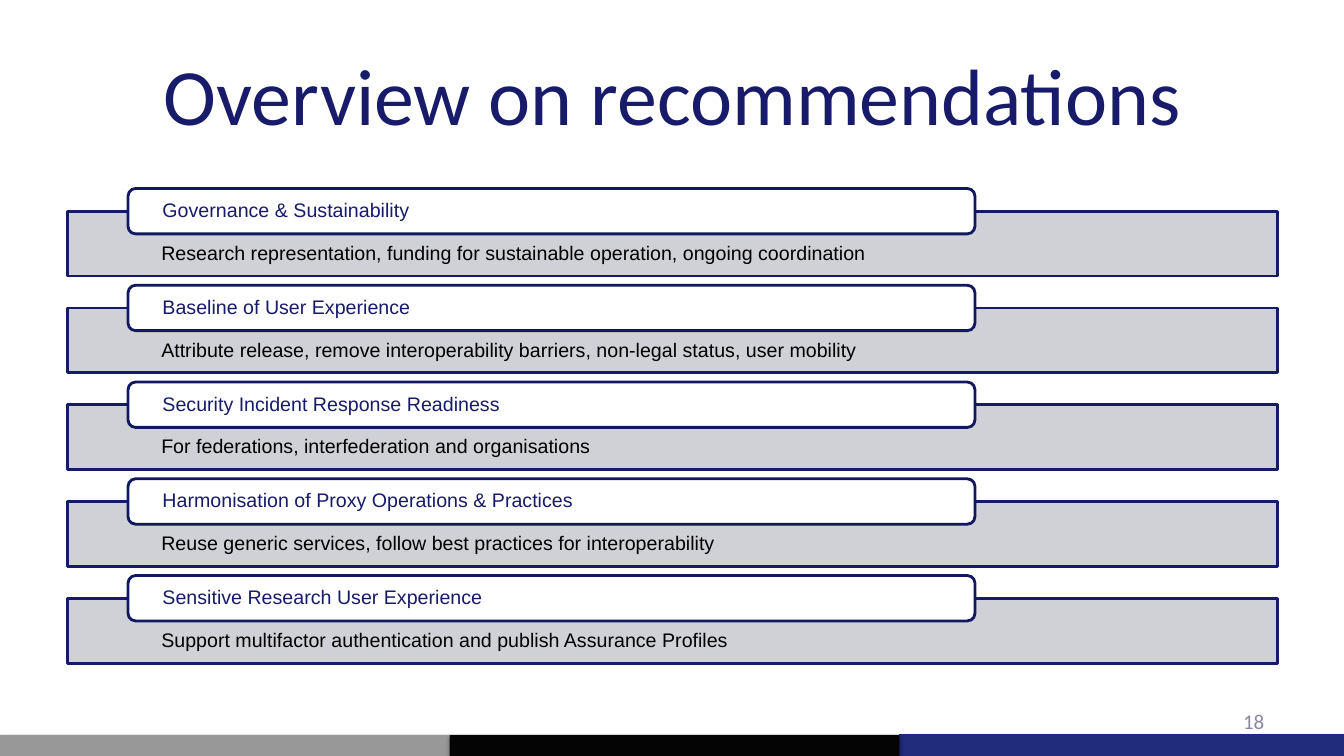
from lxml.etree import SubElement
from pptx import Presentation
from pptx.dml.color import RGBColor
from pptx.enum.shapes import MSO_SHAPE
from pptx.enum.text import MSO_ANCHOR, PP_ALIGN
from pptx.oxml import parse_xml
from pptx.oxml.ns import qn
from pptx.util import Inches, Pt

NAVY = "181B6A"
RECOMMENDATIONS = [
    ("Governance & Sustainability",
     "Research representation, funding for sustainable operation, ongoing coordination"),
    ("Baseline of User Experience",
     "Attribute release, remove interoperability barriers, non-legal status, user mobility"),
    ("Security Incident Response Readiness",
     "For federations, interfederation and organisations"),
    ("Harmonisation of Proxy Operations & Practices",
     "Reuse generic services, follow best practices for interoperability"),
    ("Sensitive Research User Experience",
     "Support multifactor authentication and publish Assurance Profiles"),
]
BAND_SHADOW = (
    '<a:effectLst xmlns:a="http://schemas.openxmlformats.org/drawingml/2006/main">'
    '<a:outerShdw blurRad="39370" dist="22860" dir="5400000" rotWithShape="0">'
    '<a:srgbClr val="000000"><a:alpha val="35000"/></a:srgbClr>'
    '</a:outerShdw></a:effectLst>'
)


def color(value):
    return RGBColor.from_string(value)


def write(shape, text, size=14, font="Arial", ink="000000", align=PP_ALIGN.LEFT,
          anchor=MSO_ANCHOR.MIDDLE, insets=(0.13, 0.06, 0.13, 0.06), spacing=None):
    """Put one formatted paragraph into a shape; insets are left, top, right, bottom."""
    frame = shape.text_frame
    frame.word_wrap = True
    frame.vertical_anchor = anchor
    (frame.margin_left, frame.margin_top,
     frame.margin_right, frame.margin_bottom) = map(Inches, insets)
    paragraph = frame.paragraphs[0]
    paragraph.alignment = align
    paragraph.line_spacing = spacing
    run = paragraph.add_run()
    run.text = text
    run.font.size = Pt(size)
    run.font.name = font
    run.font.color.rgb = color(ink)


def add_text(slide, box, text, **style):
    write(slide.shapes.add_textbox(*map(Inches, box)), text, **style)


def add_box(slide, box, fill, line=None, width=2, preset=MSO_SHAPE.RECTANGLE):
    shape = slide.shapes.add_shape(preset, *map(Inches, box))
    shape.shadow.inherit = False
    shape.fill.solid()
    shape.fill.fore_color.rgb = color(fill)
    if line:
        shape.line.color.rgb = color(line)
        shape.line.width = Pt(width)
    else:
        shape.line.fill.background()
    return shape


def footer_bands(slide, left, top, width, height):
    bands = [(0, "989898", None), (2, "212C7D", "1C287C"), (1, "040404", None)]
    for column, fill, line in bands:
        band = add_box(slide, (left + column * width / 3, top, width / 3, height),
                       fill, line, 0.75)
        properties = band.element.spPr
        properties.replace(properties.find(qn("a:effectLst")), parse_xml(BAND_SHADOW))


def recommendation(slide, left, top, width, height, heading, detail):
    """Draw a grey panel with a heading label overlapping its top edge."""
    label_height = 0.45
    panel_top = top + label_height / 2
    panel = add_box(slide, (left, panel_top, width, height - label_height / 2),
                    "CBCBD3", "151A6A")
    fill_color = panel.element.spPr.find(qn("a:solidFill"))[0]
    SubElement(fill_color, qn("a:alpha"), val="90000")
    write(panel, detail, anchor=MSO_ANCHOR.TOP,
          insets=(0.93, 0.32, 0.93, 0.11), spacing=0.9)

    label = add_box(slide, (left + width * 0.05, top, width * 0.7, label_height),
                    "FFFFFF", "12185F", preset=MSO_SHAPE.ROUNDED_RECTANGLE)
    label.adjustments[0] = 0.167
    write(label, heading, ink=NAVY, insets=(0.32, 0, 0.32, 0), spacing=0.9)


def recommendation_list(slide, left, top, width, pitch):
    for row, (heading, detail) in enumerate(RECOMMENDATIONS):
        recommendation(slide, left, top + row * pitch, width, 0.87, heading, detail)


def main():
    deck = Presentation()
    deck.slide_width, deck.slide_height = Inches(13.33), Inches(7.5)
    slide = deck.slides.add_slide(deck.slide_layouts[6])
    footer_bands(slide, 0, 7.29, 13.38, 0.24)
    add_text(slide, (0.67, 0.3, 12, 1.25), "Overview on recommendations",
             size=57, font="Calibri", ink=NAVY, align=PP_ALIGN.CENTER)
    recommendation_list(slide, 0.67, 1.87, 12, pitch=0.96)
    add_text(slide, (9.56, 6.95, 3.11, 0.4), "18",
             size=15, font="Calibri", ink="8989A0", align=PP_ALIGN.RIGHT)
    deck.save("out.pptx")


if __name__ == "__main__":
    main()
